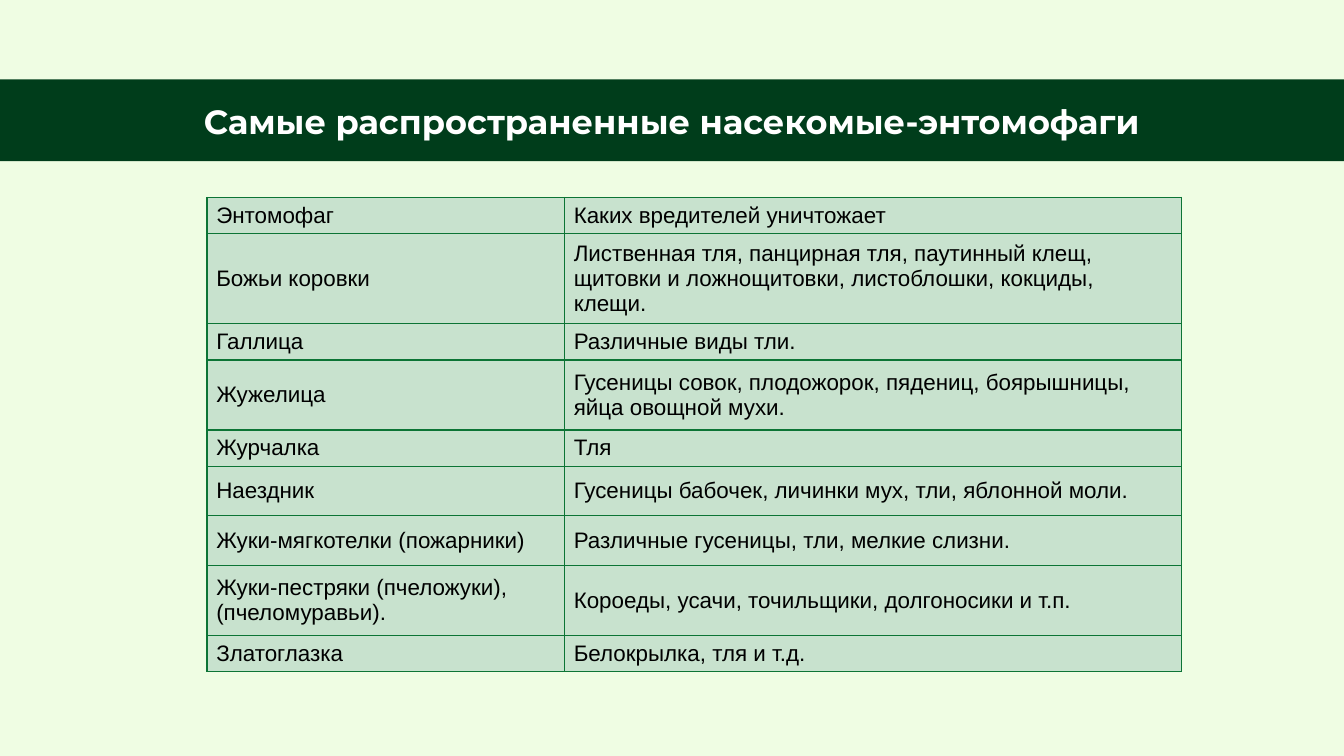
from lxml.etree import SubElement
from pptx import Presentation
from pptx.dml.color import RGBColor
from pptx.enum.shapes import MSO_SHAPE
from pptx.enum.text import MSO_ANCHOR, PP_ALIGN
from pptx.oxml.ns import qn
from pptx.util import Inches, Pt

ROWS = [
    (0.23, "Энтомофаг", "Каких вредителей уничтожает"),
    (0.67, "Божьи коровки",
     "Лиственная тля, панцирная тля, паутинный клещ, щитовки и ложнощитовки, "
     "листоблошки, кокциды, клещи."),
    (0.23, "Галлица", "Различные виды тли."),
    (0.52, "Жужелица", "Гусеницы совок, плодожорок, пядениц, боярышницы, яйца овощной мухи."),
    (0.23, "Журчалка", "Тля"),
    (0.37, "Наездник", "Гусеницы бабочек, личинки мух, тли, яблонной моли."),
    (0.37, "Жуки-мягкотелки (пожарники)", "Различные гусеницы, тли, мелкие слизни."),
    (0.52, "Жуки-пестряки (пчеложуки), (пчеломуравьи).",
     "Короеды, усачи, точильщики, долгоносики и т.п."),
    (0.23, "Златоглазка", "Белокрылка, тля и т.д."),
]
COLUMN_WIDTHS = (2.66, 4.59)


def paint(fill, color):
    fill.solid()
    fill.fore_color.rgb = RGBColor.from_string(color)


def style_font(font, name, size, color, bold=False):
    font.name = name
    font.size = Pt(size)
    font.bold = bold
    paint(font.fill, color)


def add_title_band(slide, left, top, width, height):
    band = slide.shapes.add_shape(
        MSO_SHAPE.RECTANGLE, Inches(left), Inches(top), Inches(width), Inches(height))
    band.shadow.inherit = False
    band.line.fill.background()
    paint(band.fill, "003D1B")

    title = slide.shapes.add_textbox(
        Inches(left + 0.78), Inches(top + 0.05), Inches(width - 1.56), Inches(height - 0.09))
    frame = title.text_frame
    frame.word_wrap = True
    frame.vertical_anchor = MSO_ANCHOR.MIDDLE
    frame.margin_left = frame.margin_right = Inches(0.1)
    frame.margin_top = frame.margin_bottom = Inches(0.1)
    frame.text = "Самые распространенные насекомые-энтомофаги"
    paragraph = frame.paragraphs[0]
    paragraph.alignment = PP_ALIGN.CENTER
    style_font(paragraph.runs[0].font, "Montserrat", 18, "FFFFFF", bold=True)


def add_borders(cell, color, width):
    properties = cell._tc.get_or_add_tcPr()
    for side in ("a:lnL", "a:lnR", "a:lnT", "a:lnB"):
        line = SubElement(properties, qn(side), w=str(Pt(width)))
        fill = SubElement(line, qn("a:solidFill"))
        SubElement(fill, qn("a:srgbClr"), val=color)


def fill_cell(cell, text):
    add_borders(cell, "0C7435", 0.75)
    paint(cell.fill, "C8E2CE")
    cell.vertical_anchor = MSO_ANCHOR.MIDDLE
    cell.margin_left = cell.margin_right = Pt(5)
    cell.margin_top = cell.margin_bottom = Pt(2.5)
    cell.text_frame.text = text
    style_font(cell.text_frame.paragraphs[0].runs[0].font, "Arial", 12, "000000")


def add_insect_table(slide, left, top):
    width = sum(COLUMN_WIDTHS)
    height = sum(row[0] for row in ROWS)
    table = slide.shapes.add_table(
        len(ROWS), len(COLUMN_WIDTHS),
        Inches(left), Inches(top), Inches(width), Inches(height)).table
    table.first_row = table.horz_banding = False
    for column, column_width in zip(table.columns, COLUMN_WIDTHS):
        column.width = Inches(column_width)
    for row, (row_height, *texts) in zip(table.rows, ROWS):
        row.height = Inches(row_height)
        for cell, text in zip(row.cells, texts):
            fill_cell(cell, text)


def main():
    presentation = Presentation()
    presentation.slide_width = Inches(10)
    presentation.slide_height = Inches(10) * 9 // 16
    slide = presentation.slides.add_slide(presentation.slide_layouts[6])
    paint(slide.background.fill, "EFFDE3")
    add_title_band(slide, 0, 0.59, 10, 0.61)
    add_insect_table(slide, 1.54, 1.47)
    presentation.save("out.pptx")


if __name__ == "__main__":
    main()
